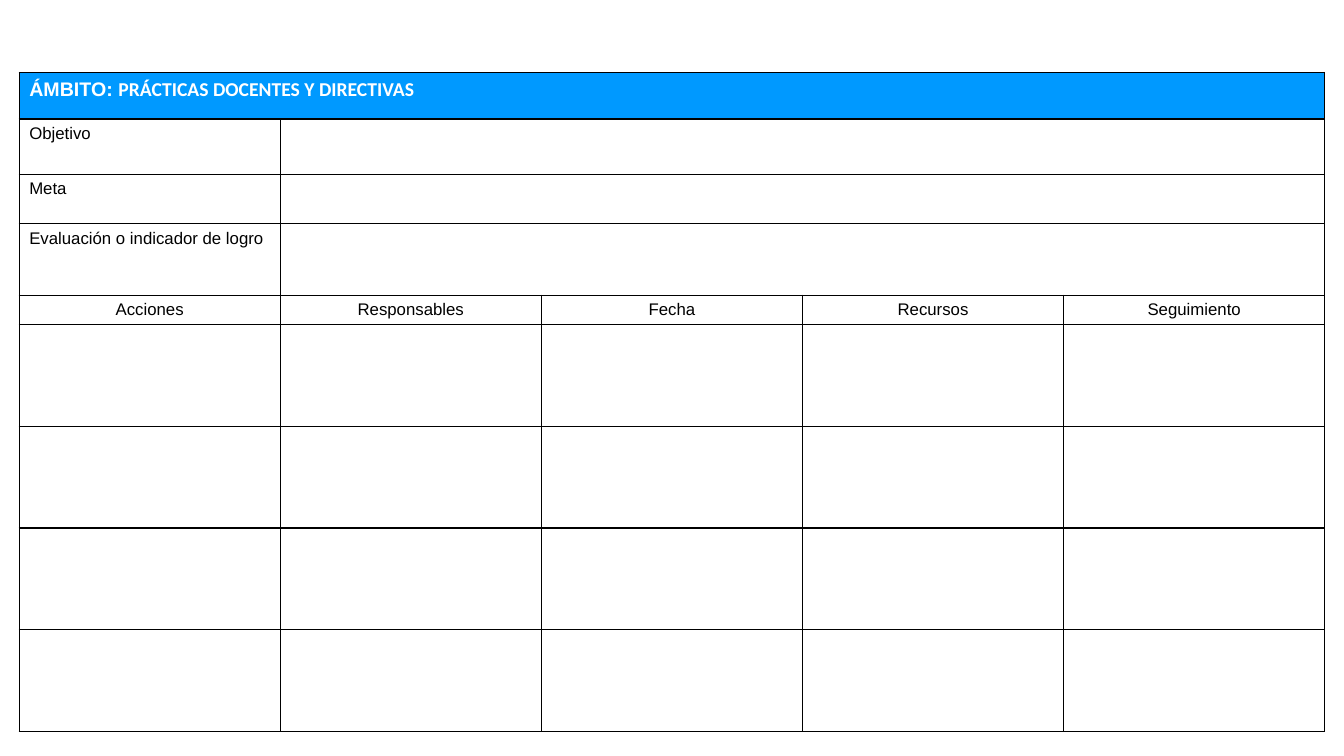
from lxml import etree
from pptx import Presentation
from pptx.dml.color import RGBColor
from pptx.enum.text import PP_ALIGN
from pptx.oxml.ns import qn
from pptx.util import Inches, Pt

CENTER = PP_ALIGN.CENTER
LEFT = PP_ALIGN.LEFT
COLORS = {"banner": "0099FF", "paper": "FFFFFF", "ink": "000000"}

COLUMN_COUNT = 5
COLUMN_WIDTH = 2.59
GOAL_HEIGHTS = {"Objetivo": 0.55, "Meta": 0.49, "Evaluación o indicador de logro": 0.71}
HEADINGS = ["Acciones", "Responsables", "Fecha", "Recursos", "Seguimiento"]
ACTION_ROWS = 4
row_heights = [0.46, *GOAL_HEIGHTS.values(), 0.29] + [1.01] * ACTION_ROWS
heading_row = 1 + len(GOAL_HEIGHTS)


def style_cell(cell, fill):
    """Give a cell thin black borders and a solid fill."""
    properties = cell._tc.get_or_add_tcPr()
    for side in ("a:lnL", "a:lnR", "a:lnT", "a:lnB"):
        line = etree.SubElement(properties, qn(side), w=str(Pt(1)))
        solid = etree.SubElement(line, qn("a:solidFill"))
        etree.SubElement(solid, qn("a:srgbClr"), val=COLORS["ink"])
    cell.fill.solid()
    cell.fill.fore_color.rgb = RGBColor.from_string(COLORS[fill])


def write_cell(cell, runs, size=12, color="ink", bold=False, alignment=LEFT):
    """Write (text, font name) runs into a cell."""
    paragraph = cell.text_frame.paragraphs[0]
    paragraph.alignment = alignment
    paragraph.font.size = Pt(size)
    paragraph.font.bold = bold
    paragraph.font.color.rgb = RGBColor.from_string(COLORS[color])
    for text, font_name in runs:
        run = paragraph.add_run()
        run.text = text
        run.font.name = font_name


presentation = Presentation()
presentation.slide_width = Inches(13.33)
presentation.slide_height = Inches(7.5)
slide = presentation.slides.add_slide(presentation.slide_layouts[6])

# Planning table
table = slide.shapes.add_table(
    len(row_heights), COLUMN_COUNT, Inches(0.19), Inches(0.72),
    Inches(COLUMN_WIDTH * COLUMN_COUNT), Inches(sum(row_heights)),
).table
table.first_row = False
table.horz_banding = False
for column in table.columns:
    column.width = Inches(COLUMN_WIDTH)
for row_index, height in enumerate(row_heights):
    table.rows[row_index].height = Inches(height)
    for cell in table.rows[row_index].cells:
        style_cell(cell, "banner" if row_index == 0 else "paper")

# Banner across all columns
last_column = COLUMN_COUNT - 1
table.cell(0, 0).merge(table.cell(0, last_column))
write_cell(
    table.cell(0, 0),
    [("ÁMBITO: ", "Arial"), ("PRÁCTICAS DOCENTES Y DIRECTIVAS", "Calibri")],
    size=14, color="paper", bold=True,
)

# Goals: label and one wide answer cell
for row_index, label in enumerate(GOAL_HEIGHTS, start=1):
    write_cell(table.cell(row_index, 0), [(label, "Arial")])
    table.cell(row_index, 1).merge(table.cell(row_index, last_column))

# Headings of the action grid
for column_index, heading in enumerate(HEADINGS):
    write_cell(table.cell(heading_row, column_index), [(heading, "Arial")], alignment=CENTER)

presentation.save("out.pptx")
